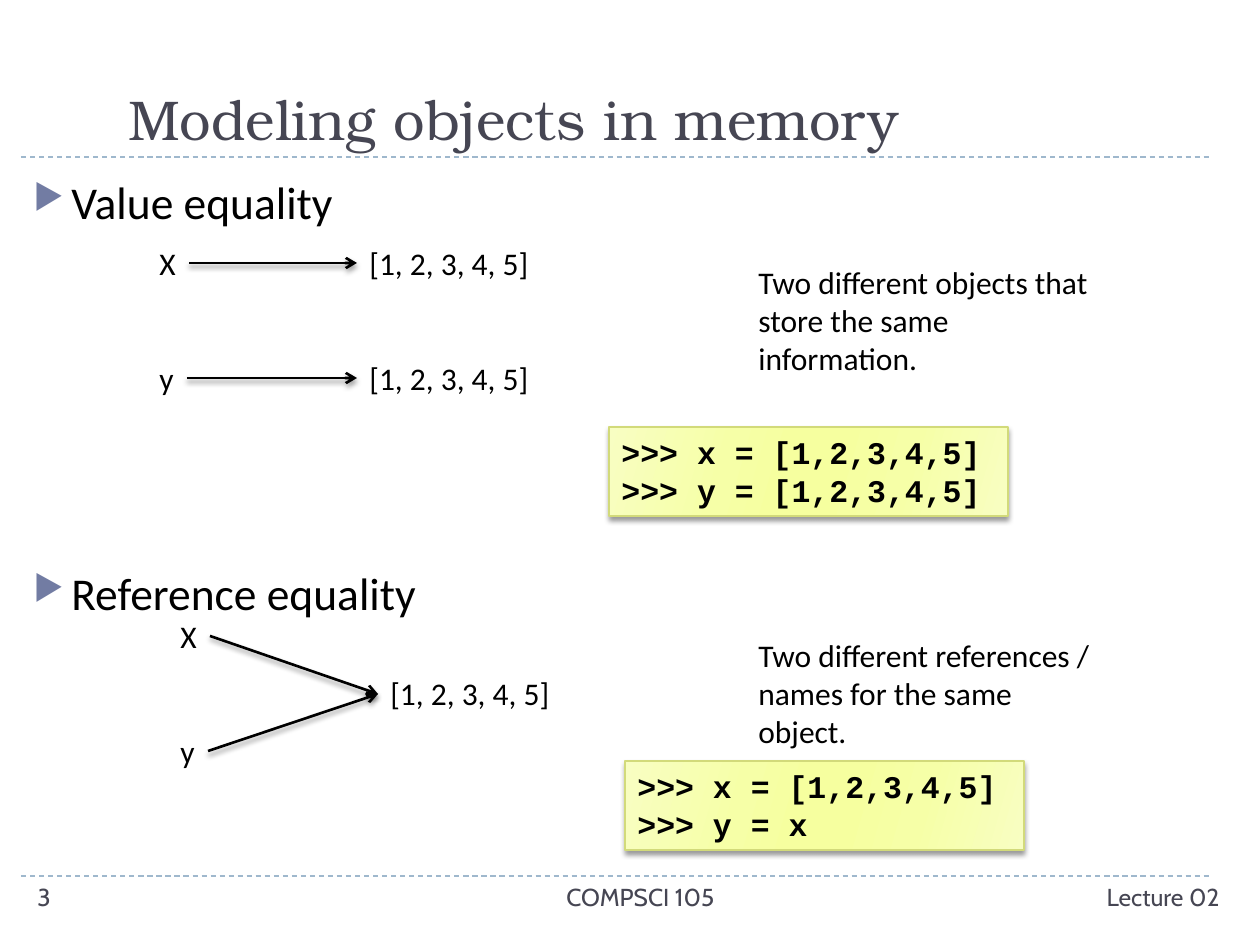
from pptx import Presentation, oxml, util as u
from pptx.dml.color import RGBColor
from pptx.enum import dml, shapes, text
from pptx.oxml.ns import nsdecls, qn

PX = u.Inches(1) / 126
COLORS = {"black": "000000", "slate": "464653", "rule": "9FB8CD", "bullet": "727CA3",
          "code_edge": "D2DA7A"}
CODE_STOPS = [(0, "F8FEC2"), (30, "F6FFA7"), (45, "F6FF9F"),
              (55, "F6FF9F"), (73, "F6FFA7"), (100, "F8FEC2")]
SHADOW = (f'<a:effectLst {nsdecls("a")}><a:outerShdw blurRad="38100" dist="25400" dir="5400000" '
          'rotWithShape="0"><a:srgbClr val="000000"><a:alpha val="40000"/></a:srgbClr>'
          '</a:outerShdw></a:effectLst>')
LEFT, CENTER, RIGHT = text.PP_ALIGN.LEFT, text.PP_ALIGN.CENTER, text.PP_ALIGN.RIGHT

presentation = Presentation()
presentation.slide_width, presentation.slide_height = u.Inches(10), u.Inches(7.5)
slide = presentation.slides.add_slide(presentation.slide_layouts[6])


def write(lines, box, shape=None, size=18, font="Calibri", color="black", bold=False,
          align=LEFT, anchor=text.MSO_ANCHOR.TOP, wrap=True, bullet=False, gap=0):
    """Write one paragraph per line, in the given shape or in a new text box."""
    shape = shape or slide.shapes.add_textbox(*[round(n * PX) for n in box])
    frame = shape.text_frame
    frame.word_wrap, frame.vertical_anchor = wrap, anchor
    for index, line in enumerate(lines):
        paragraph = frame.paragraphs[0] if index == 0 else frame.add_paragraph()
        paragraph.alignment = align
        if bullet:
            properties = paragraph._p.get_or_add_pPr()
            properties.set("marL", str(round(38 * PX)))
            properties.set("indent", str(round(-38 * PX)))
            for element in (f'<a:buClr {nsdecls("a")}><a:srgbClr val="{COLORS["bullet"]}"/></a:buClr>',
                            f'<a:buSzPct {nsdecls("a")} val="76000"/>',
                            f'<a:buChar {nsdecls("a")} char="▶"/>'):
                properties.append(oxml.parse_xml(element))
        if index and gap:
            paragraph.space_before = u.Pt(gap)
        run = paragraph.add_run()
        run.text = line
        run.font.size, run.font.name, run.font.bold = u.Pt(size), font, bold
        run.font.color.rgb = RGBColor.from_string(COLORS[color])


def connect(start, end, color="black", width=1.5, arrow=True):
    """Draw a shadowed arrow, or a plain dashed rule."""
    line = slide.shapes.add_connector(shapes.MSO_CONNECTOR.STRAIGHT,
                                      *[round(n * PX) for n in (*start, *end)])
    line.line.width = u.Pt(width)
    line.line.color.rgb = RGBColor.from_string(COLORS[color])
    properties = line._element.spPr
    if arrow:
        properties.find(qn("a:ln")).append(
            oxml.parse_xml(f'<a:tailEnd {nsdecls("a")} type="arrow"/>'))
        properties.append(oxml.parse_xml(SHADOW))
    else:
        line.line.dash_style = dml.MSO_LINE.DASH
        properties.append(oxml.parse_xml(f'<a:effectLst {nsdecls("a")}/>'))


# Rules above the footer and below the title
for y in (876, 157):
    connect((21, y), (1212, y), color="rule", width=0.75, arrow=False)

# Title and headings
write(["Modeling objects in memory"], (116, 21, 1110, 137), size=32, font="TeX Gyre Bonum",
      color="slate", anchor=text.MSO_ANCHOR.BOTTOM)
write(["Value equality", "Reference equality"], (21, 168, 1207, 703), size=26,
      bullet=True, gap=192)

# Names and the lists they refer to
LIST = "[1, 2, 3, 4, 5]"
for label, x, y in [("X", 147, 238), ("y", 147, 353), (LIST, 357, 238), (LIST, 357, 353),
                    ("X", 168, 611), ("y", 168, 726), (LIST, 378, 668)]:
    write([label], (x, y, 186 if label == LIST else 42, 50), wrap=False)
for start, end in [((189, 263), (357, 263)), ((187, 378), (357, 378)),
                   ((210, 636), (378, 694)), ((208, 751), (378, 694))]:
    connect(start, end)

# Explanations
for note, y in [("Two different objects that store the same information.", 257),
                ("Two different references / names for the same object.", 630)]:
    write([note], (746, y, 357, 127))

# Code boxes
for x, y, second_line in [(609, 427, ">>> y = [1,2,3,4,5]"), (625, 761, ">>> y = x")]:
    box = (x, y, 399, 89)
    code = slide.shapes.add_shape(shapes.MSO_SHAPE.RECTANGLE, *[round(n * PX) for n in box])
    code.fill.gradient()
    code.fill.gradient_angle = 344
    stops = code._element.spPr.find(qn("a:gradFill")).find(qn("a:gsLst"))
    for stop in list(stops):
        stops.remove(stop)
    for position, color in CODE_STOPS:
        stops.append(oxml.parse_xml(f'<a:gs {nsdecls("a")} pos="{position * 1000}">'
                                    f'<a:srgbClr val="{color}"/></a:gs>'))
    code.line.width = u.Pt(0.75)
    code.line.color.rgb = RGBColor.from_string(COLORS["code_edge"])
    code._element.spPr.append(oxml.parse_xml(SHADOW))
    write([">>> x = [1,2,3,4,5]", second_line], box, shape=code, font="Courier New", bold=True)

# Footer
for label, x, width, align in [("Lecture 02", 917, 315, RIGHT), ("COMPSCI 105", 399, 483, CENTER),
                               ("3", 25, 273, LEFT)]:
    write([label], (x, 876, width, 50), size=14, font="Cabin", color="slate", align=align)

presentation.save("out.pptx")
